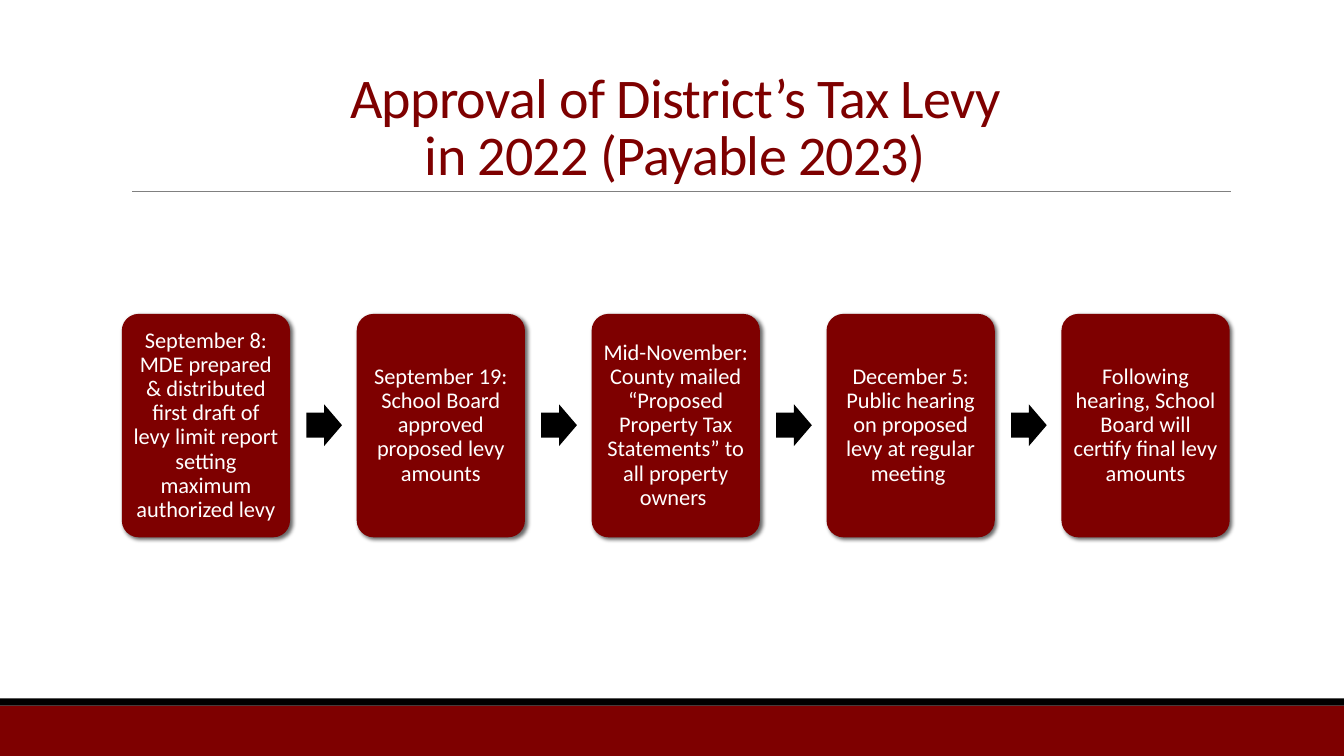
from lxml import etree
from pptx import Presentation
from pptx.dml.color import RGBColor
from pptx.enum.shapes import MSO_CONNECTOR, MSO_SHAPE
from pptx.enum.text import MSO_ANCHOR, PP_ALIGN
from pptx.oxml import parse_xml
from pptx.oxml.ns import qn
from pptx.util import Cm, Pt

RECT = MSO_SHAPE.RECTANGLE
ROUND = MSO_SHAPE.ROUNDED_RECTANGLE
ARROW = MSO_SHAPE.RIGHT_ARROW
LINE = MSO_CONNECTOR.STRAIGHT
CENTER = PP_ALIGN.CENTER
MIDDLE = MSO_ANCHOR.MIDDLE
BOTTOM = MSO_ANCHOR.BOTTOM
WIDE, HIGH = 33.87, 19.05
COLORS = {"maroon": "7E0000", "black": "000000", "gray": "808080", "white": "FFFFFF"}
SHADOW = (
    '<a:outerShdw xmlns:a="http://schemas.openxmlformats.org/drawingml/2006/main" '
    'blurRad="38100" dist="25400" dir="2700000" algn="br" rotWithShape="0">'
    '<a:srgbClr val="000000"><a:alpha val="60000"/></a:srgbClr></a:outerShdw>'
)
TITLE = ["Approval of District’s Tax Levy", "in 2022 (Payable 2023)"]
STEPS = [
    "September 8: MDE prepared & distributed first draft of levy limit report setting maximum authorized levy",
    "September 19: School Board approved proposed levy amounts",
    "Mid-November: County mailed “Proposed Property Tax Statements” to all property owners ",
    "December 5: Public hearing on proposed levy at regular meeting ",
    "Following hearing, School Board will certify final levy amounts",
]


class Deck:
    """Draws styled elements on the current slide."""

    def __init__(self, slide):
        self.slide = slide
        self.font = "Calibri"

    def color(self, name):
        return RGBColor.from_string(COLORS[name])

    def shape(self, kind, x, y, w, h, fill, adjust=()):
        item = self.slide.shapes.add_shape(kind, Cm(x), Cm(y), Cm(w), Cm(h))
        item.shadow.inherit = False
        item.fill.solid()
        item.fill.fore_color.rgb = self.color(fill)
        item.line.fill.background()
        for i, value in enumerate(adjust):
            item.adjustments[i] = value
        return item

    def line(self, x, y, end, color):
        item = self.slide.shapes.add_connector(LINE, Cm(x), Cm(y), Cm(end), Cm(y))
        item.line.color.rgb = self.color(color)
        item.line.width = Pt(0.5)
        etree.SubElement(item._element.spPr, qn("a:effectLst"))

    def text(self, frame, lines, size, color, anchor, spacing, track=0):
        frame.word_wrap = True
        frame.vertical_anchor = anchor
        para = frame.paragraphs[0]
        para.alignment = CENTER
        para.line_spacing = spacing
        for i, words in enumerate(lines):
            if i:
                para.add_line_break()
            run = para.add_run()
            run.text = words
            run.font.name = self.font
            run.font.size = Pt(size)
            run.font.color.rgb = self.color(color)
            if track:
                run._r.get_or_add_rPr().set("spc", str(track))

    def title(self, lines, x, y, w, h):
        box = self.slide.shapes.add_textbox(Cm(x), Cm(y), Cm(w), Cm(h))
        self.text(box.text_frame, lines, 40, "maroon", BOTTOM, 0.85, -50)

    def card(self, words, x, y, w, h):
        item = self.shape(ROUND, x, y, w, h, "maroon", [0.1])
        item._element.spPr.find(qn("a:effectLst")).append(parse_xml(SHADOW))
        frame = item.text_frame
        frame.margin_left = frame.margin_right = Cm(0.17)
        frame.margin_top = frame.margin_bottom = Cm(0.17)
        self.text(frame, [words], 16, "white", MIDDLE, 0.9)


def main():
    prs = Presentation()
    prs.slide_width, prs.slide_height = Cm(WIDE), Cm(HIGH)
    deck = Deck(prs.slides.add_slide(prs.slide_layouts[6]))
    deck.shape(RECT, 0, 17.78, WIDE, 1.27, "maroon")
    deck.shape(RECT, 0, 17.6, WIDE, 0.18, "black")
    deck.line(3.33, 4.82, 31.01, "gray")
    deck.title(TITLE, 3.05, 0.79, 27.94, 4.04)
    left, pitch = 3.07, 5.92
    for i, words in enumerate(STEPS):
        x = left + i * pitch
        if i:
            deck.shape(ARROW, x - 1.27, 10.19, 0.9, 1.05, "black", [0.6, 0.5])
        deck.card(words, x, 7.91, 4.24, 5.63)
    prs.save("out.pptx")


if __name__ == "__main__":
    main()
